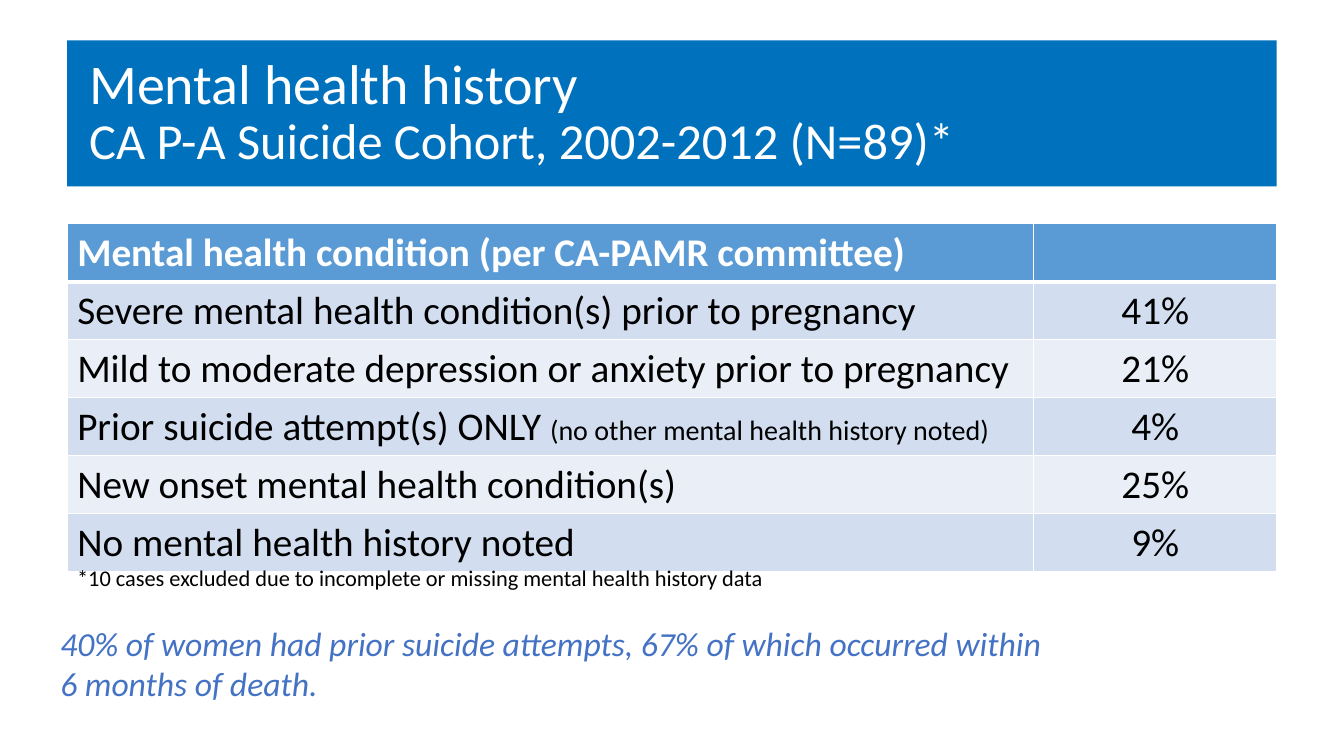
from lxml import etree
from pptx import Presentation
from pptx.dml.color import RGBColor
from pptx.enum.shapes import MSO_SHAPE
from pptx.enum.text import MSO_ANCHOR, PP_ALIGN
from pptx.oxml.ns import qn
from pptx.util import Inches, Pt

RECTANGLE = MSO_SHAPE.RECTANGLE
MIDDLE, TOP = MSO_ANCHOR.MIDDLE, MSO_ANCHOR.TOP
LEFT, CENTER = PP_ALIGN.LEFT, PP_ALIGN.CENTER

WHITE = RGBColor(0xFF, 0xFF, 0xFF)
BLACK = RGBColor(0x00, 0x00, 0x00)
BANNER_BLUE = RGBColor(0x00, 0x71, 0xBC)
HEADER_BLUE = RGBColor(0x5B, 0x9B, 0xD5)
BANDS = (RGBColor(0xD2, 0xDE, 0xEF), RGBColor(0xEA, 0xEF, 0xF7))
FINDING_BLUE = RGBColor(0x44, 0x72, 0xC4)

GRID_COLUMNS, GRID_ROWS = 40, 75
MARGIN, CONTENT_WIDTH = 2, 36

CONDITIONS = [
    ([("Severe mental health condition(s) prior to pregnancy", 28)], "41%"),
    ([("Mild to moderate depression or anxiety prior to pregnancy", 28)], "21%"),
    ([("Prior suicide attempt(s) ONLY ", 28),
      ("(no other mental health history noted)", 20)], "4%"),
    ([("New onset mental health condition(s)", 28)], "25%"),
    ([("No mental health history noted", 28)], "9%"),
]


class SlideBuilder:
    """Holds the style and the slide; lengths are grid columns and rows."""

    font_name = "Calibri"

    def __init__(self, deck):
        self.column = deck.slide_width / GRID_COLUMNS
        self.row = deck.slide_height / GRID_ROWS
        self.slide = deck.slides.add_slide(deck.slide_layouts[6])

    def place(self, left, top, width, height):
        return (round(left * self.column), round(top * self.row),
                round(width * self.column), round(height * self.row))

    def add_text(self, paragraph, text, size, color, bold=False, italic=False):
        run = paragraph.add_run()
        run.text = text
        font = run.font
        font.name, font.size = self.font_name, Pt(size)
        font.bold, font.italic = bold, italic
        font.color.rgb = color

    def banner(self, area, lines):
        box = self.slide.shapes.add_shape(RECTANGLE, *self.place(*area))
        box.shadow.inherit = False
        box.fill.solid()
        box.fill.fore_color.rgb = BANNER_BLUE
        box.line.fill.background()
        frame = box.text_frame
        frame.word_wrap = True
        frame.vertical_anchor = MIDDLE
        heading = frame.paragraphs[0]
        heading.alignment = LEFT
        heading.line_spacing = 0.9
        heading._p.get_or_add_pPr().set("marL", str(Inches(0.12)))
        for index, (text, size) in enumerate(lines):
            if index:
                heading.add_line_break()
            self.add_text(heading, text, size, WHITE)

    def note(self, area, text, size, color, italic=False):
        frame = self.slide.shapes.add_textbox(*self.place(*area)).text_frame
        frame.word_wrap = True
        frame.vertical_anchor = TOP
        self.add_text(frame.paragraphs[0], text, size, color, italic=italic)

    def cell(self, cell, runs, fill, color=BLACK, bold=False,
             alignment=LEFT, top_width=1, bottom_width=1):
        cell.fill.solid()
        cell.fill.fore_color.rgb = fill
        self.borders(cell, top_width, bottom_width)
        paragraph = cell.text_frame.paragraphs[0]
        paragraph.alignment = alignment
        for text, size in runs:
            self.add_text(paragraph, text, size, color, bold)

    def borders(self, cell, top_width, bottom_width):
        properties = cell._tc.get_or_add_tcPr()
        widths = {"a:lnL": 1, "a:lnR": 1, "a:lnT": top_width, "a:lnB": bottom_width}
        for index, (side, width) in enumerate(widths.items()):
            line = etree.Element(qn(side), w=str(Pt(width)))
            fill = etree.SubElement(line, qn("a:solidFill"))
            etree.SubElement(fill, qn("a:srgbClr"), val=str(WHITE))
            properties.insert(index, line)

    def condition_table(self, area, column_widths, heading, conditions):
        table = self.slide.shapes.add_table(
            len(conditions) + 1, len(column_widths), *self.place(*area)).table
        table.horz_banding = False
        for column, width in zip(table.columns, column_widths):
            column.width = round(width * self.column)
        for cell, runs in zip(table.rows[0].cells, ([(heading, 28)], [])):
            self.cell(cell, runs, HEADER_BLUE, WHITE, bold=True, bottom_width=3)
        for index, (condition, share) in enumerate(conditions):
            band = BANDS[index % 2]
            # The first row shares the heavy rule under the header
            rule = 1 if index else 3
            label, value = table.rows[index + 1].cells
            self.cell(label, condition, band, top_width=rule)
            self.cell(value, [(share, 28)], band, alignment=CENTER, top_width=rule)


def main():
    deck = Presentation()
    deck.slide_width, deck.slide_height = Inches(13.33), Inches(7.5)
    builder = SlideBuilder(deck)

    # Title banner
    builder.banner((MARGIN, 4, CONTENT_WIDTH, 14.5), [
        ("Mental health history", 40),
        ("CA P-A Suicide Cohort, 2002-2012 (N=89)*", 36),
    ])

    # Conditions and their shares
    builder.condition_table(
        (MARGIN, 22.2, CONTENT_WIDTH, 34.5), (28.77, 7.23),
        "Mental health condition (per CA-PAMR committee)", CONDITIONS)

    # Footnote and key finding
    builder.note(
        (MARGIN, 55.5, 26.55, 3.7),
        "*10 cases excluded due to incomplete or missing mental health history data",
        16, BLACK)
    builder.note(
        (1.5, 61.3, 30.4, 9.1),
        "40% of women had prior suicide attempts, 67% of which occurred within "
        "6 months of death.", 24, FINDING_BLUE, italic=True)

    deck.save("out.pptx")


if __name__ == "__main__":
    main()
